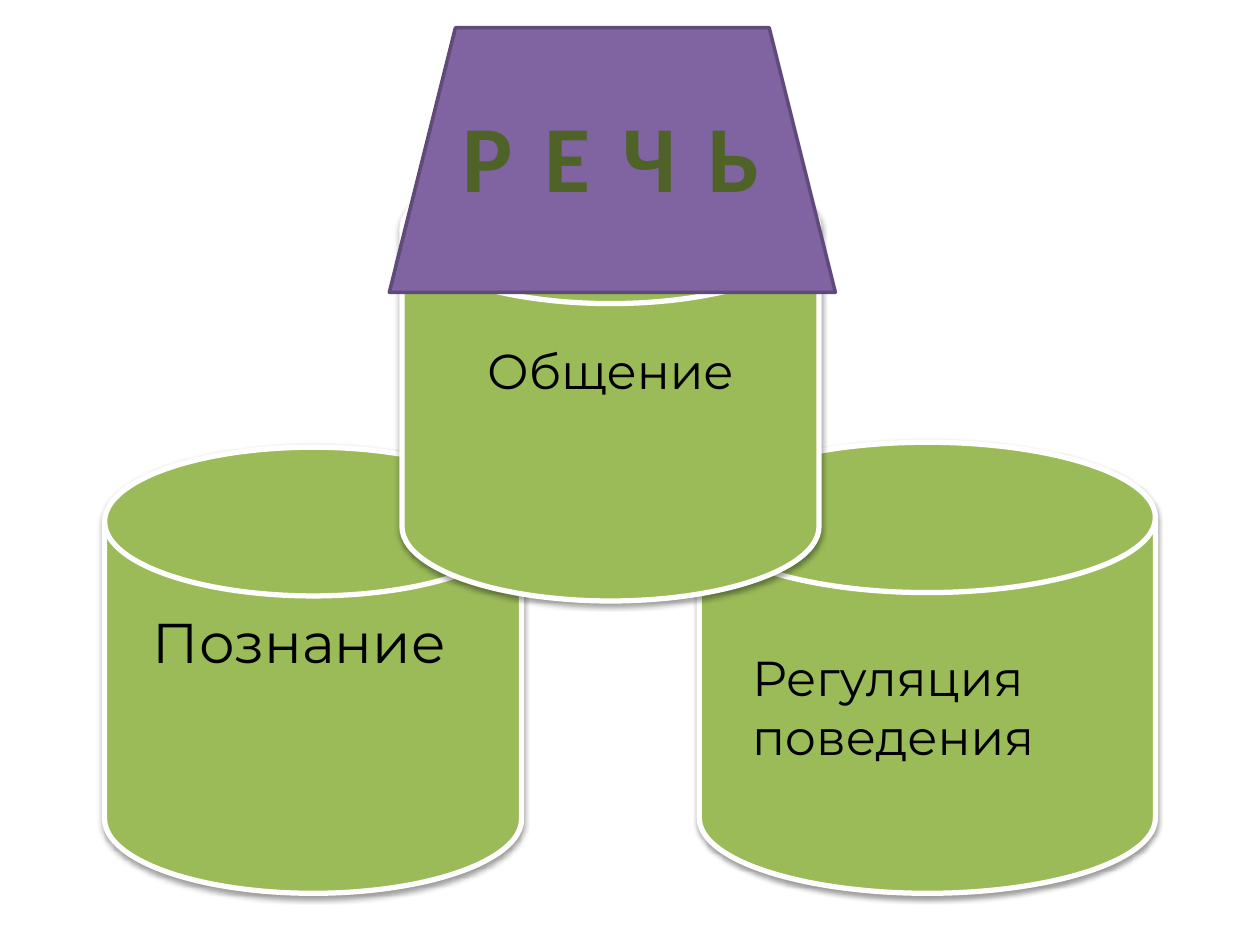
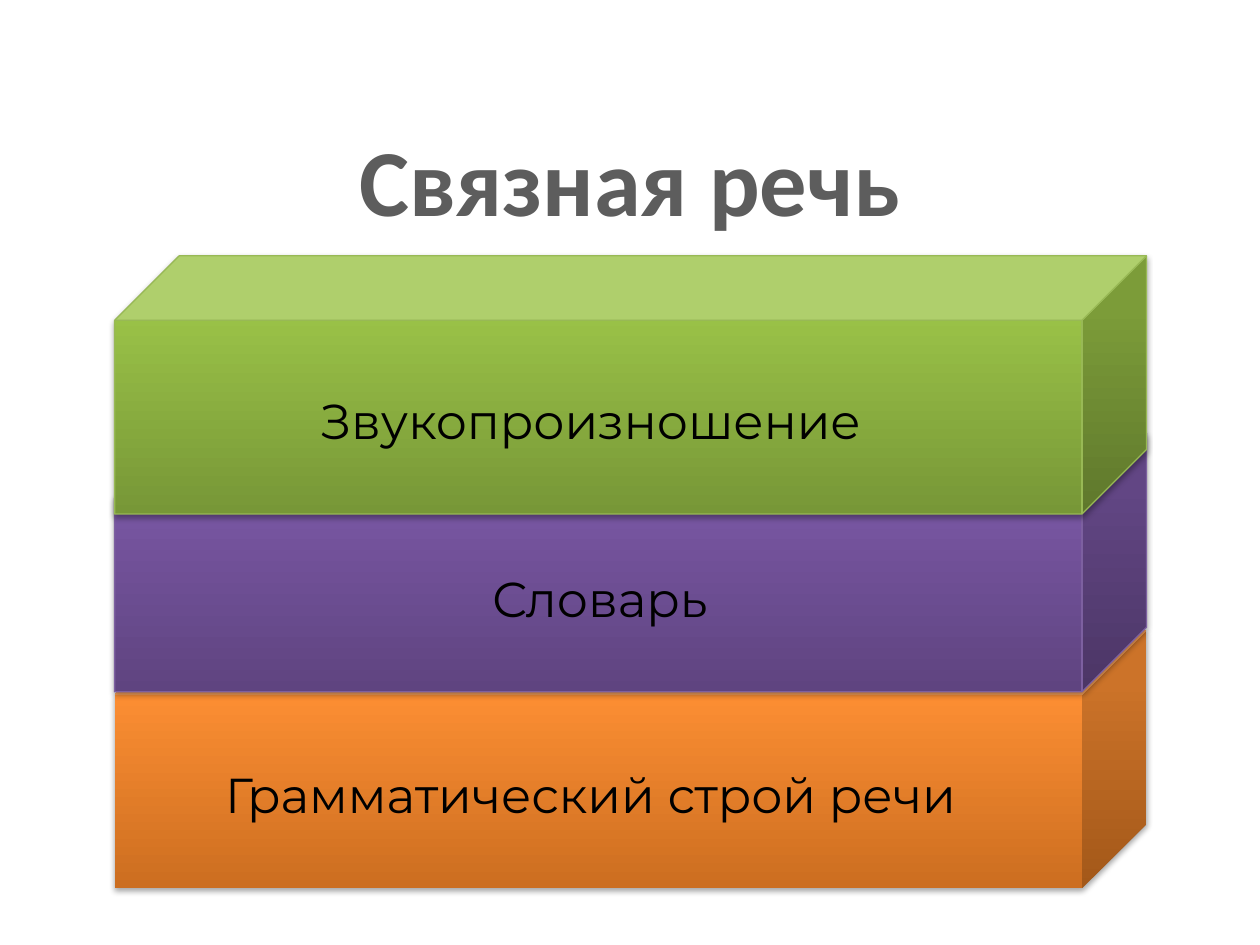
"""Build two slides on speech: its three functions and its building blocks."""
from dataclasses import dataclass

from lxml import etree
from pptx import Presentation
from pptx.dml.color import RGBColor
from pptx.enum.shapes import MSO_SHAPE
from pptx.enum.text import MSO_ANCHOR, MSO_AUTO_SIZE, PP_ALIGN
from pptx.oxml.ns import qn
from pptx.util import Emu, Pt

EMU_PER_PX = 9144
TITLE_ONLY = 5
DISK, TRAPEZOID, CUBE = MSO_SHAPE.FLOWCHART_MAGNETIC_DISK, MSO_SHAPE.TRAPEZOID, MSO_SHAPE.CUBE
LEFT, CENTER = PP_ALIGN.LEFT, PP_ALIGN.CENTER
TOP = MSO_ANCHOR.TOP
GROW = MSO_AUTO_SIZE.SHAPE_TO_FIT_TEXT


@dataclass(frozen=True)
class Theme:
    """Colours, fonts and type sizes of the deck."""
    title_font: str = "Calibri"
    body_font: str = "Montserrat"
    title_size: int = 54
    large_size: int = 32
    body_size: int = 28
    ink: str = "000000"
    white: str = "FFFFFF"
    disk: str = "9BBB59"
    roof: str = "8064A2"
    roof_edge: str = "5F4A78"
    speech: str = "4F6228"
    speech_edge: str = "F4F6F9"
    steel: tuple = ((0, "555555"), (49, "5D5D5D"), (50, "000000"), (95, "000000"), (100, "000000"))
    orange: tuple = ((0, "CC6E20"), (80, "FF9034"), (100, "FF9136"))
    purple: tuple = ((0, "5F4480"), (80, "7B58A6"), (100, "7C57A8"))
    green: tuple = ((0, "779737"), (80, "9BC348"), (100, "9DC746"))
    purple_edge: str = "7D60A0"
    green_edge: str = "98B955"


THEME = Theme()


def px(length):
    """Turn px into EMU."""
    return Emu(length * EMU_PER_PX)


def apply_format(target, values):
    """Set every attribute named in values."""
    for name, value in values.items():
        setattr(target, name, value)


def add_node(parent, tag, **attributes):
    """Append a DrawingML element with the given attributes."""
    return etree.SubElement(parent, qn(f"a:{tag}"), {key: str(value) for key, value in attributes.items()})


def add_color(parent, color):
    """Append an RGB colour element."""
    return add_node(parent, "srgbClr", val=color)


def paint(fill, holder, color, angle):
    """Fill with one colour, or with a gradient when given its stops."""
    if isinstance(color, str):
        fill.solid()
        fill.fore_color.rgb = RGBColor.from_string(color)
        return
    fill.gradient()
    gradient = holder.find(qn("a:gradFill"))
    for child in list(gradient):
        gradient.remove(child)
    stops = add_node(gradient, "gsLst")
    for percent, stop_color in color:
        add_color(add_node(stops, "gs", pos=percent * 1000), stop_color)
    add_node(gradient, "lin", ang=angle * 60000, scaled=0)


def add_shadow(shape, opacity, distance):
    """Cast a soft shadow straight down."""
    effects = shape.element.spPr.find(qn("a:effectLst"))
    shadow = add_node(effects, "outerShdw", blurRad=Pt(3.1), dist=Pt(distance),
                      dir=90 * 60000, rotWithShape=0)
    add_node(add_color(shadow, THEME.ink), "alpha", val=opacity * 1000)


def add_solid(page, kind, area, color, edge=None, edge_width=0.75, shadow=None):
    """Add a preset shape with its fill, edge and shadow."""
    shape = page.shapes.add_shape(kind, *map(px, area))
    shape.shadow.inherit = False
    paint(shape.fill, shape.element.spPr, color, 270)
    if edge:
        shape.line.color.rgb = RGBColor.from_string(edge)
        shape.line.width = Pt(edge_width)
    else:
        shape.line.fill.background()
    if shadow:
        add_shadow(shape, *shadow)


def write_text(box, text, font, color, align=CENTER, wrap=True):
    """Write one formatted paragraph into a box and return its run."""
    apply_format(box.text_frame, {"word_wrap": wrap, "auto_size": GROW, "vertical_anchor": TOP})
    para = box.text_frame.paragraphs[0]
    para.alignment = align
    span = para.add_run()
    span.text = text
    apply_format(span.font, font)
    paint(span.font.fill, span._r.rPr, color, 90)
    return span


def add_caption(page, text, area, size=THEME.body_size, align=CENTER):
    """Add a text box with a label."""
    box = page.shapes.add_textbox(*map(px, area))
    write_text(box, text, {"name": THEME.body_font, "size": Pt(size)}, THEME.ink, align)


def add_title(page, text, area, color, edge, edge_width, spacing=0, wrap=True):
    """Place the title placeholder in front, with outlined bold letters."""
    title = page.shapes.title
    title.element.getparent().append(title.element)
    apply_format(title, dict(zip(("left", "top", "width", "height"), map(px, area))))
    font = {"name": THEME.title_font, "size": Pt(THEME.title_size), "bold": True}
    properties = write_text(title, text, font, color, wrap=wrap)._r.rPr
    properties.set("spc", str(spacing * 100))
    outline = add_node(properties, "ln", w=Pt(edge_width))
    add_color(add_node(outline, "solidFill"), edge)
    properties.insert(0, outline)


def add_page(deck):
    """Add a slide that has only a title."""
    return deck.slides.add_slide(deck.slide_layouts[TITLE_ONLY])


def build_functions(deck):
    """Stack three disks under the roof of speech."""
    page = add_page(deck)
    for area in ((555, 351, 362, 358), (83, 355, 331, 354), (319, 123, 331, 354)):
        add_solid(page, DISK, area, THEME.disk, THEME.white, 3, (38, 1.6))
    add_solid(page, TRAPEZOID, (309, 22, 354, 210), THEME.roof, THEME.roof_edge, 2)
    add_title(page, "Р Е Ч Ь ", (118, 73, 756, 101), THEME.speech, THEME.speech_edge, 0.9, spacing=3)
    add_caption(page, "Познание ", (98, 477, 291, 64), THEME.large_size)
    add_caption(page, "Регуляция поведения", (587, 509, 299, 104), align=LEFT)
    add_caption(page, "Общение", (319, 265, 331, 57))


def build_blocks(deck):
    """Pile up the blocks of coherent speech, lowest first."""
    page = add_page(deck)
    add_title(page, "Связная речь", (273, 92, 454, 101), THEME.steel, THEME.white, 1.4, wrap=False)
    blocks = (
        ("Грамматический строй речи", 500, 709, THEME.orange, None),
        ("Словарь", 344, 724, THEME.purple, THEME.purple_edge),
        ("Звукопроизношение", 203, 709, THEME.green, THEME.green_edge),
    )
    for text, top, caption_width, color, edge in blocks:
        add_solid(page, CUBE, (91, top, 819, 205), color, edge, shadow=(35, 1.8))
        add_caption(page, text, (114, top + 102, caption_width, 57))


def main():
    """Build and save the deck."""
    deck = Presentation()
    apply_format(deck, {"slide_width": px(1000), "slide_height": px(750)})
    build_functions(deck)
    build_blocks(deck)
    deck.save("out.pptx")


if __name__ == "__main__":
    main()
